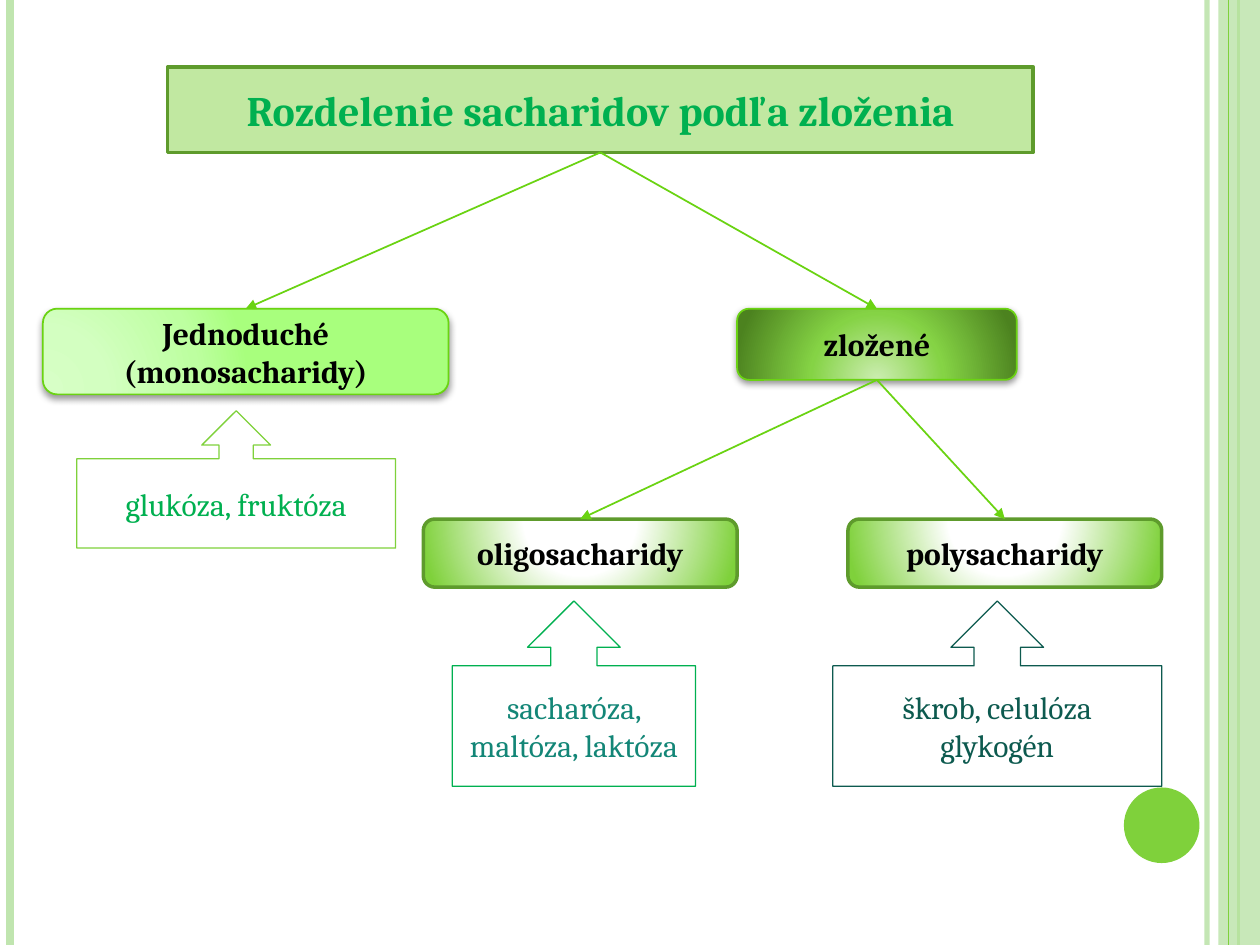
from lxml import etree
from pptx import Presentation
from pptx.dml.color import RGBColor
from pptx.enum.shapes import MSO_CONNECTOR, MSO_SHAPE
from pptx.enum.text import MSO_ANCHOR, MSO_AUTO_SIZE, PP_ALIGN
from pptx.oxml.ns import qn
from pptx.util import Inches, Pt

STRAIGHT = MSO_CONNECTOR.STRAIGHT
RECTANGLE, ELLIPSE = MSO_SHAPE.RECTANGLE, MSO_SHAPE.OVAL
ROUNDED, CALLOUT = MSO_SHAPE.ROUNDED_RECTANGLE, MSO_SHAPE.UP_ARROW_CALLOUT
TOP, BOTTOM = 0, 2
FONT = "Cambria"
TITLE_ONLY = 5

# Grid of 100 columns by 75 rows
WIDTH, HEIGHT = Inches(10), Inches(7.5)
COLUMNS, ROWS = 100, 75

GREEN, PALE, DARK, ARROW = "7FD13B", "C0E5AF", "5E9B2C", "6AD312"
# Gradients: stops, then the focus as left, top, right, bottom in percent
MINT = ([(0, "D7FFC6"), (30, "D3FFC1"), (75, "BDFFA0"), (100, "A8FF7D")],
        (5, 100, 120, 10))
FOREST = ([(0, "CCEDB1"), (46, "85D345"), (100, "4C821F")], (50, 130, 50, -30))
GLOW = ([(0, "FFFFFF"), (35, "FFFFFF"), (100, GREEN)], (50, -80, 50, 180))


def colour(code):
    return RGBColor.from_string(code)


def grid(left, top, width, height):
    """Turn columns and rows into slide lengths."""
    across, down = WIDTH / COLUMNS, HEIGHT / ROWS
    return (round(left * across), round(top * down),
            round(width * across), round(height * down))


def child(parent, tag, **values):
    return etree.SubElement(parent, qn(tag),
                            {key: str(value) for key, value in values.items()})


def set_alpha(element, percent):
    for tint in element.iter(qn("a:srgbClr")):
        child(tint, "a:alpha", val=percent * 1000)


def set_fill(shape, code, alpha=100):
    shape.fill.solid()
    shape.fill.fore_color.rgb = colour(code)
    if alpha < 100:
        set_alpha(shape._element.spPr.find(qn("a:solidFill")), alpha)


def set_gradient(shape, stops, focus):
    shape.fill.gradient()
    gradient = shape._element.spPr.find(qn("a:gradFill"))
    for old in list(gradient):
        gradient.remove(old)
    stop_list = child(gradient, "a:gsLst")
    for position, code in stops:
        stop = child(stop_list, "a:gs", pos=position * 1000)
        child(stop, "a:srgbClr", val=code)
    radial = child(gradient, "a:path", path="circle")
    sides = {side: share * 1000 for side, share in zip("ltrb", focus)}
    child(radial, "a:fillToRect", **sides)


def set_line(shape, code, width):
    shape.line.color.rgb = colour(code)
    shape.line.width = Pt(width)


def set_shadow(shape, alpha, blur, distance):
    effects = shape._element.spPr.find(qn("a:effectLst"))
    shadow = child(effects, "a:outerShdw", blurRad=Pt(blur), dist=Pt(distance),
                   dir=90 * 60000, rotWithShape=0)
    tint = child(shadow, "a:srgbClr", val="000000")
    child(tint, "a:alpha", val=alpha * 1000)


def write(shape, text, size, code, bold):
    frame = shape.text_frame
    frame.word_wrap = True
    frame.auto_size = MSO_AUTO_SIZE.NONE
    frame.vertical_anchor = MSO_ANCHOR.MIDDLE
    frame.text = text
    for para in frame.paragraphs:
        para.alignment = PP_ALIGN.CENTER
        for span in para.runs:
            span.font.name, span.font.size = FONT, Pt(size)
            span.font.bold = bold
            span.font.color.rgb = colour(code)


def add_plain(page, kind, box):
    shape = page.shapes.add_shape(kind, *grid(*box))
    shape.shadow.inherit = False
    return shape


def add_line(page, code, width):
    line = page.shapes.add_connector(STRAIGHT, 0, 0, 0, 0)
    set_line(line, code, width)
    child(line._element.spPr, "a:effectLst")
    return line


def add_frame(page):
    """Vertical stripes at both edges and the round marker."""
    def stripe(column, code, width, alpha=100):
        line = add_line(page, code, width)
        line.begin_x = line.end_x = grid(column, 0, 0, 0)[0]
        line.end_y = HEIGHT
        if alpha < 100:
            set_alpha(line._element.spPr.find(qn("a:ln")), alpha)

    stripe(95.8, PALE, 3, 93)
    stripe(0.8, PALE, 4.5)
    stripe(98.3, GREEN, 1.5)
    band = add_plain(page, RECTANGLE, (96.7, 0, 3.3, ROWS))
    set_fill(band, PALE, 87)
    stripe(97.5, GREEN, 0.75)
    marker = add_plain(page, ELLIPSE, (89.2, 62.5, 6, 6))
    set_fill(marker, GREEN)
    for shape in (band, marker):
        shape.line.fill.background()


def add_title(page, text, box):
    title = page.shapes.title
    title.left, title.top, title.width, title.height = grid(*box)
    outline = etree.Element(qn("a:prstGeom"), prst="roundRect")
    child(outline, "a:avLst")
    title._element.spPr.find(qn("a:xfrm")).addnext(outline)
    set_fill(title, GREEN, 48)
    set_line(title, DARK, 2)
    write(title, text, 24, "00B050", True)
    return title


def add_group(page, text, box, gradient, line, shadow=None):
    node = add_plain(page, ROUNDED, box)
    set_gradient(node, *gradient)
    set_line(node, *line)
    if shadow:
        set_shadow(node, *shadow)
    write(node, text, 18, "000000", True)
    return node


def add_examples(page, text, box, line_code, text_code):
    callout = add_plain(page, CALLOUT, box)
    callout.fill.background()
    set_line(callout, line_code, 0.75)
    write(callout, text, 18, text_code, False)


def add_branches(page, parent, children):
    for node in children:
        arrow = add_line(page, ARROW, 1)
        arrow.begin_connect(parent, BOTTOM)
        arrow.end_connect(node, TOP)
        child(arrow._element.spPr.find(qn("a:ln")), "a:tailEnd", type="triangle")


def main():
    deck = Presentation()
    deck.slide_width, deck.slide_height = WIDTH, HEIGHT
    page = deck.slides.add_slide(deck.slide_layouts[TITLE_ONLY])
    add_frame(page)

    # Tree of saccharides
    title = add_title(page, "Rozdelenie sacharidov podľa zloženia",
                      (13.3, 5.3, 68.7, 6.8))
    simple = add_group(page, "Jednoduché (monosacharidy)",
                       (3.4, 24.5, 32.2, 6.8), MINT, (ARROW, 1), (40, 4, 2))
    compound = add_group(page, "zložené", (58.5, 24.5, 22.2, 5.65),
                         FOREST, (ARROW, 1), (42, 4, 1.6))
    kinds = [add_group(page, text, (left, 41.2, 24.9, 5.4), GLOW, (DARK, 2))
             for text, left in (("oligosacharidy", 33.6), ("polysacharidy", 67.3))]
    add_branches(page, title, (simple, compound))
    add_branches(page, compound, kinds)

    # Examples under each end of the tree
    add_examples(page, "glukóza, fruktóza", (6.1, 32.6, 25.3, 10.9), GREEN, "00B050")
    add_examples(page, "sacharóza, maltóza, laktóza", (35.9, 47.7, 19.3, 14.7),
                 "00B050", "138677")
    add_examples(page, "škrob, celulóza\nglykogén", (66.1, 47.7, 26.1, 14.7),
                 "0D5A4F", "0D5A4F")
    deck.save("out.pptx")


if __name__ == "__main__":
    main()
